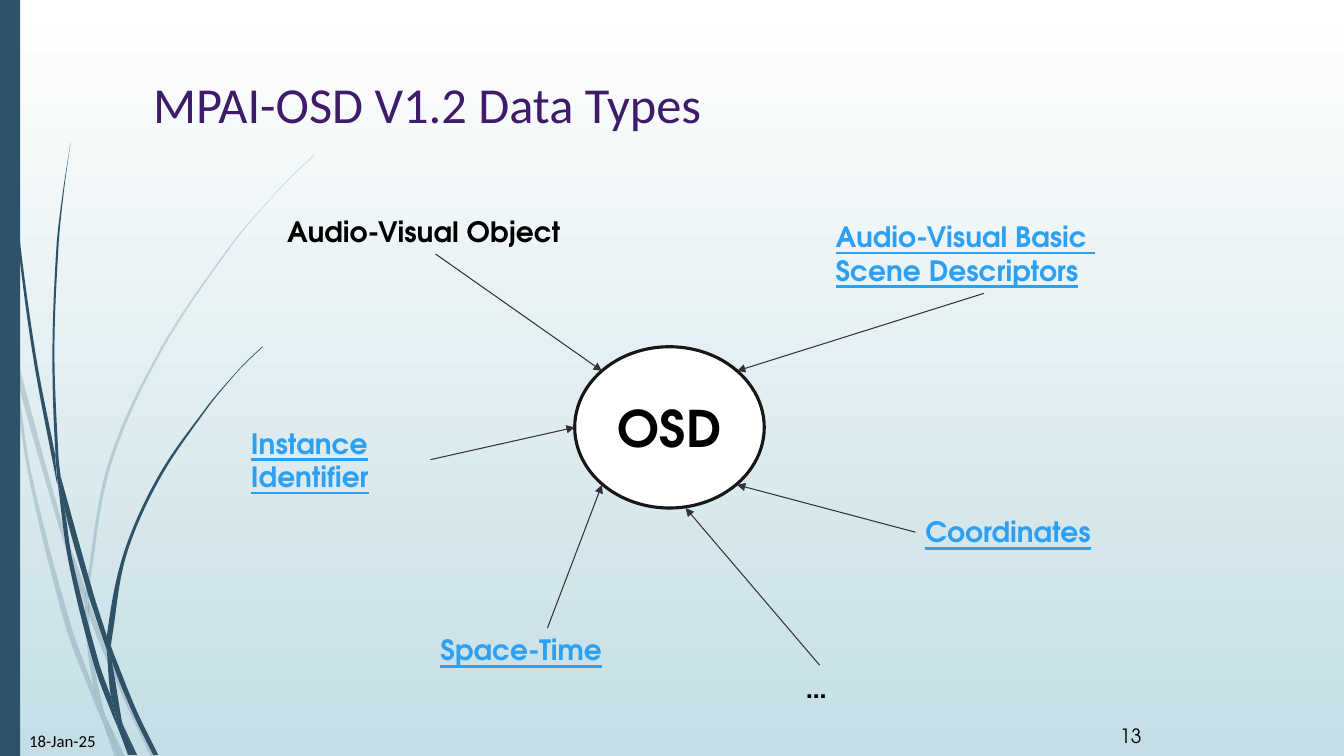
from math import dist
from lxml.etree import SubElement
from pptx import Presentation
from pptx.dml.color import RGBColor
from pptx.enum.shapes import MSO_CONNECTOR, MSO_SHAPE
from pptx.enum.text import MSO_ANCHOR, PP_ALIGN
from pptx.oxml.ns import qn
from pptx.util import Inches, Pt

WHITE = RGBColor(0xFF, 0xFF, 0xFF)
MIST = RGBColor(0xC5, 0xDE, 0xE5)
NAVY = RGBColor(0x2E, 0x53, 0x69)
PURPLE = RGBColor(0x3F, 0x1C, 0x6A)
BLACK = RGBColor(0, 0, 0)
LINK_BLUE = RGBColor(0x2D, 0xA0, 0xF1)
OUTLINE = RGBColor(0x17, 0x17, 0x17)
ARROW_GREY = RGBColor(0x33, 0x33, 0x33)
HEADING_FONT = "Calibri"
DIAGRAM_FONT = "TeX Gyre Adventor"

PALE_BLADES = [
    [(.11, 3.5), (.09, 3.22), (0, 2.82), (0, 2.99), (.1, 3.44)],
    [(.58, 5.22), (.84, 5.99), (.85, 5.86), (.62, 5.2), (.14, 3.45), (.17, 3.76)],
    [(.92, 6.07), (.88, 5.96), (.88, 6.1), (1.23, 6.94), (1.5, 7.51), (1.55, 7.51),
     (1.27, 6.92)],
    [(1.19, 7.51), (1.24, 7.51), (1.05, 7.11)],
    [(.93, 6.83), (.7, 6.19), (.31, 4.69), (.17, 3.76), (.11, 3.5), (.28, 4.7), (.65, 6.21),
     (.92, 6.93), (1.01, 7.14), (.99, 7.07)],
    [(.84, 5.99), (.87, 6.46), (.93, 6.83), (.96, 6.92), (1.05, 7.11), (1.03, 7.06),
     (.91, 6.46), (.88, 6.1), (.88, 6.08)],
    [(.88, 5.84), (1.1, 4.62), (1.6, 3.49), (2.29, 2.45), (2.68, 1.98), (2.9, 1.75),
     (3.12, 1.54), (3.12, 1.53), (2.89, 1.75), (2.68, 1.97), (2.28, 2.44), (1.58, 3.48),
     (1.07, 4.61), (.85, 5.84), (.85, 5.86), (.88, 5.96)],
    [(1.01, 7.14), (1.14, 7.51), (1.19, 7.51)],
    [(.88, 6.08), (.88, 6.1), (.88, 5.96), (.85, 5.86), (.84, 5.99)],
    [(.96, 6.92), (.93, 6.83), (.99, 7.07), (1.01, 7.14), (1.19, 7.51), (1.05, 7.11)],
]
DARK_BLADES = [
    [(.07, 1.1), (.17, 2.33), (.33, 3.55), (.56, 4.77), (.57, 4.81), (.55, 4.57),
     (.55, 4.53), (.36, 3.55), (.19, 2.32), (.08, 1.09), (.05, .48), (.04, 0), (.03, 0),
     (.04, .48)],
    [(.88, 5.92), (1.06, 6.45), (1.06, 6.33), (1.06, 6.31), (.93, 5.9), (.6, 4.72),
     (.64, 5.05)],
    [(1.13, 6.49), (1.1, 6.41), (1.11, 6.56), (1.32, 7.08), (1.52, 7.49), (1.57, 7.49),
     (1.36, 7.06)],
    [(1.1, 6.91), (.98, 6.57), (.72, 5.56), (.64, 5.05), (.57, 4.77), (.68, 5.57),
     (.93, 6.59), (1.11, 7.08), (1.17, 7.22), (1.16, 7.17)],
    [(.6, 4.72), (.58, 4.53), (.54, 3.49), (.58, 2.45), (.63, 1.93), (.7, 1.41),
     (.62, 1.93), (.56, 2.45), (.52, 3.49), (.55, 4.49)],
    [(1.33, 7.49), (1.36, 7.49), (1.22, 7.19)],
    [(.57, 4.77), (.64, 5.05), (.6, 4.72), (.55, 4.49), (.55, 4.53)],
    [(1.11, 6.33), (1.25, 5.52), (1.58, 4.76), (2.05, 4.06), (2.31, 3.74), (2.45, 3.59),
     (2.61, 3.44), (2.6, 3.44), (2.45, 3.58), (2.31, 3.73), (2.04, 4.05), (1.56, 4.74),
     (1.22, 5.51), (1.06, 6.31), (1.1, 6.41)],
    [(1.17, 7.22), (1.27, 7.49), (1.31, 7.49)],
    [(1.06, 6.45), (1.1, 6.91), (1.16, 7.06), (1.22, 7.19), (1.21, 7.16), (1.11, 6.56),
     (1.09, 6.51)],
    [(1.06, 6.45), (1.09, 6.51), (1.11, 6.56), (1.1, 6.41), (1.06, 6.31), (1.06, 6.33)],
    [(1.16, 7.06), (1.1, 6.91), (1.16, 7.17), (1.17, 7.22), (1.3, 7.49), (1.33, 7.49),
     (1.22, 7.19)],
]
LABELS = [
    ((2.75, 2.08, 3.13, .44), ["Audio-Visual Object"], False),
    ((8.19, 2.13, 3.13, .77), ["Audio-Visual Basic ", "Scene Descriptors"], True),
    ((2.39, 4.18, 1.88, .77), ["Instance Identifier"], True),
    ((4.27, 6.23, 2.32, .44), ["Space-Time"], True),
    ((9.08, 5.06, 1.94, .44), ["Coordinates"], True),
    ((7.89, 6.6, .48, .44), ["…"], False),
]
ARROWS = [
    ((4.27, 4.56), (5.7, 4.24)),
    ((4.32, 2.52), (5.97, 3.68)),
    ((9.76, 2.91), (7.31, 3.68)),
    ((9.08, 5.28), (7.31, 4.81)),
    ((5.43, 6.23), (5.97, 4.81)),
    ((8.13, 6.6), (6.8, 5.04)),
]


def write(paragraph, words, size, font, color, bold=False, underline=False):
    run = paragraph.add_run()
    run.text = words
    run.font.size = Pt(size)
    run.font.name = font
    run.font.color.rgb = color
    run.font.bold = bold
    run.font.underline = underline


def add_text(slide, box, lines, *style):
    frame = slide.shapes.add_textbox(*map(Inches, box)).text_frame
    frame.word_wrap = True
    for index, line in enumerate(lines):
        paragraph = frame.add_paragraph() if index else frame.paragraphs[0]
        write(paragraph, line, *style)


def paint(shape, color):
    shape.shadow.inherit = False
    shape.fill.solid()
    shape.fill.fore_color.rgb = color


def heading(start, end):
    length = dist(start, end) or 1
    return (end[0] - start[0]) / length, (end[1] - start[1]) / length


def tangent(before, knot, after):
    arriving, leaving = heading(before, knot), heading(knot, after)
    is_corner = arriving[0] * leaving[0] + arriving[1] * leaving[1] < .8
    return None if is_corner else heading(before, after)


def bend_edges(blade):
    edges = list(blade._element.iter(qn("a:lnTo")))
    start = next(blade._element.iter(qn("a:moveTo")))
    knots = [(int(node[0].get("x")), int(node[0].get("y"))) for node in [start, *edges]]
    tangents = [tangent(knots[i - 1], knot, knots[(i + 1) % len(knots)])
                for i, knot in enumerate(knots)]
    for i, edge in enumerate(edges):
        a, b = knots[i], knots[i + 1]
        reach = dist(a, b) / 3
        out, into = tangents[i] or heading(a, b), tangents[i + 1] or heading(a, b)
        controls = [(a[0] + out[0] * reach, a[1] + out[1] * reach),
                    (b[0] - into[0] * reach, b[1] - into[1] * reach), b]
        edge.remove(edge[0])
        edge.tag = qn("a:cubicBezTo")
        for x, y in controls:
            SubElement(edge, qn("a:pt"), x=str(round(x)), y=str(round(y)))


def add_blade(slide, knots, opacity):
    outline = [(Inches(x), Inches(y)) for x, y in knots]
    builder = slide.shapes.build_freeform(*outline[0])
    builder.add_line_segments(outline[1:] + outline[:1], close=True)
    blade = builder.convert_to_shape()
    bend_edges(blade)
    paint(blade, NAVY)
    blade.line.fill.background()
    if opacity < 100:
        color = blade._element.spPr.find(qn("a:solidFill"))[0]
        SubElement(color, qn("a:alpha"), val=str(opacity * 1000))


def add_backdrop(slide, height):
    fill = slide.background.fill
    fill.gradient()
    fill.gradient_angle = 270
    for stop, color, position in zip(fill.gradient_stops, (WHITE, MIST), (0, 1)):
        stop.color.rgb = color
        stop.position = position
    for blades, opacity in ((PALE_BLADES, 20), (DARK_BLADES, 100)):
        for knots in blades:
            add_blade(slide, knots, opacity)
    side_bar = slide.shapes.add_shape(MSO_SHAPE.RECTANGLE, 0, 0, Inches(.2), height)
    paint(side_bar, NAVY)
    side_bar.line.fill.background()


def add_hub(slide, box):
    hub = slide.shapes.add_shape(MSO_SHAPE.OVAL, *map(Inches, box))
    paint(hub, WHITE)
    hub.line.color.rgb = OUTLINE
    hub.line.width = Pt(2.25)
    hub.text_frame.vertical_anchor = MSO_ANCHOR.MIDDLE
    caption = hub.text_frame.paragraphs[0]
    caption.alignment = PP_ALIGN.CENTER
    write(caption, "OSD", 36, DIAGRAM_FONT, BLACK, True)


def add_arrow(slide, start, end):
    arrow = slide.shapes.add_connector(MSO_CONNECTOR.STRAIGHT, *map(Inches, start + end))
    arrow.line.color.rgb = ARROW_GREY
    arrow.line.width = Pt(.75)
    SubElement(arrow.line._get_or_add_ln(), qn("a:tailEnd"), type="triangle")
    SubElement(arrow._element.spPr, qn("a:effectLst"))


def add_diagram(slide):
    add_hub(slide, (5.7, 3.44, 1.88, 1.6))
    for box, lines, linked in LABELS:
        color = LINK_BLUE if linked else BLACK
        add_text(slide, box, lines, 20, DIAGRAM_FONT, color, True, linked)
    for start, end in ARROWS:
        add_arrow(slide, start, end)


def main():
    deck = Presentation()
    deck.slide_width, deck.slide_height = Inches(13.33), Inches(7.5)
    slide = deck.slides.add_slide(deck.slide_layouts[6])
    add_backdrop(slide, deck.slide_height)
    add_text(slide, (1.42, .68, 11.16, 1.4), ["MPAI-OSD V1.2 Data Types"],
             36, HEADING_FONT, PURPLE)
    add_text(slide, (.19, 7.2, 1.09, .4), ["18-Jan-25"], 12, HEADING_FONT, BLACK)
    add_text(slide, (11.01, 7.18, .61, .05), ["13"], 14, DIAGRAM_FONT, BLACK)
    add_diagram(slide)
    deck.save("out.pptx")


if __name__ == "__main__":
    main()
